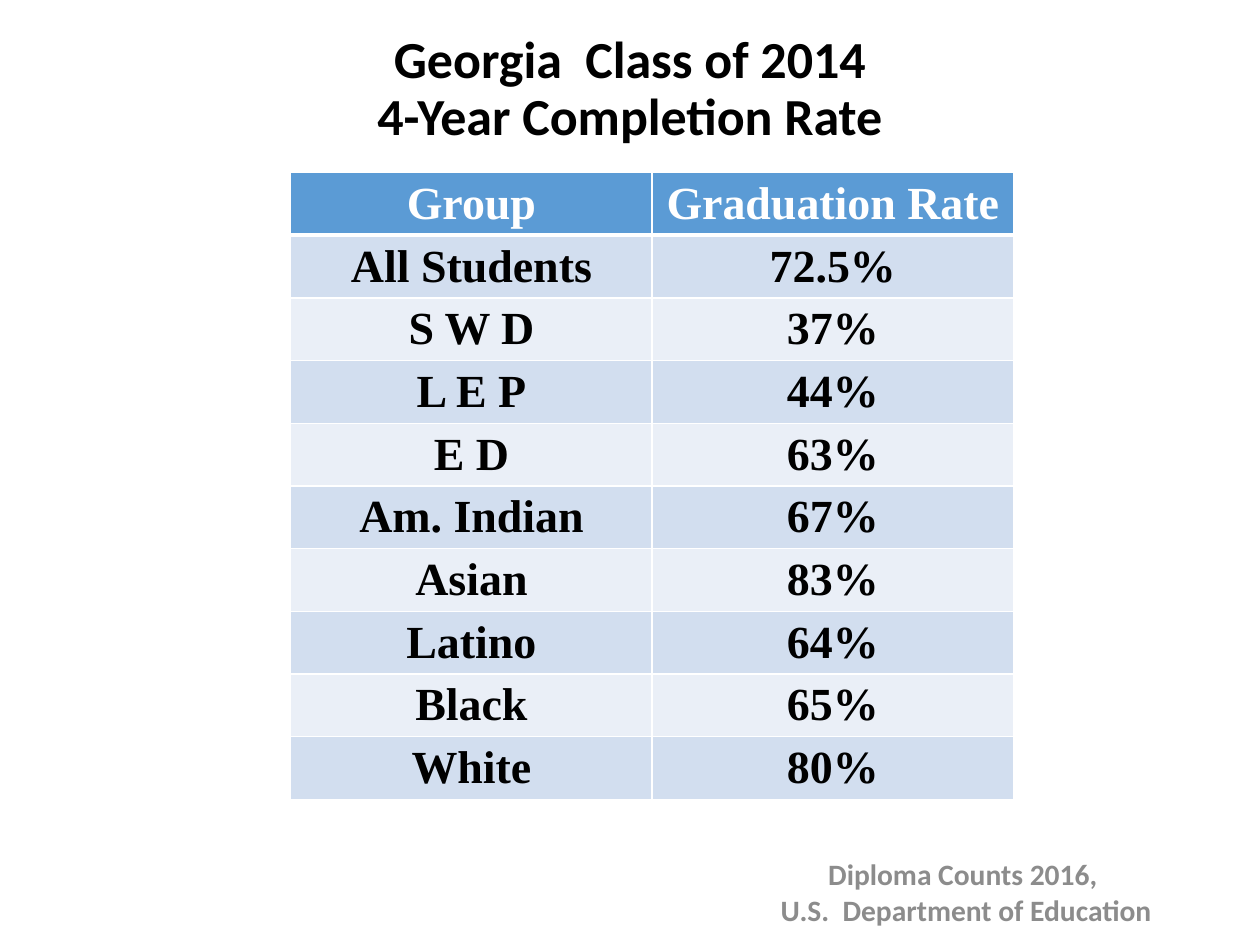
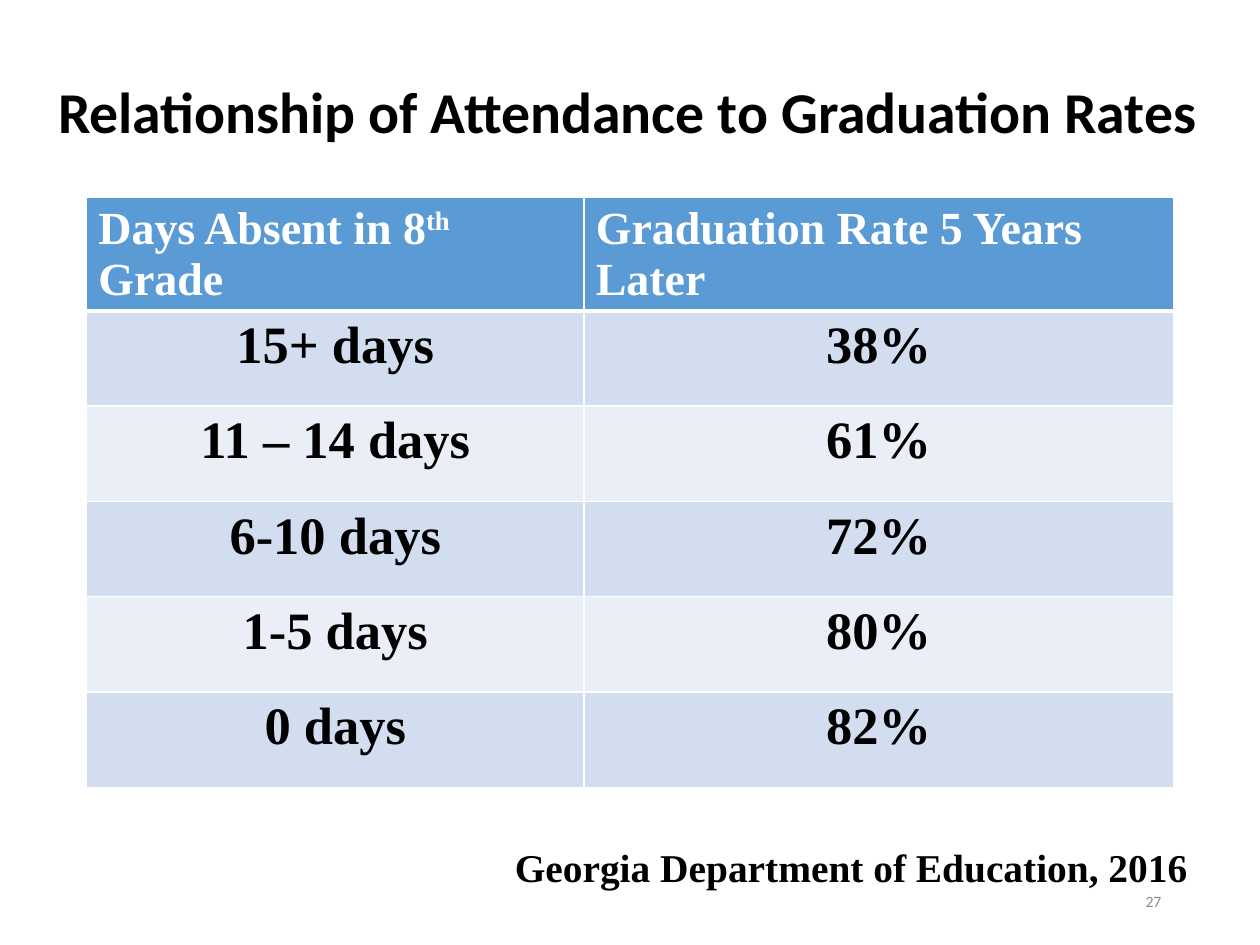
"""Build two slides of tables on graduation rates in Georgia."""
from lxml.etree import SubElement
from pptx import Presentation
from pptx.dml.color import RGBColor
from pptx.enum.text import MSO_ANCHOR, MSO_AUTO_SIZE, PP_ALIGN
from pptx.oxml.ns import qn
from pptx.util import Pt

COLOURS = {
    "header": "5B9BD5",
    "band_dark": "D2DEEF",
    "band_light": "EAEFF7",
    "white": "FFFFFF",
    "black": "000000",
    "grey": "8C8C8C",
}
SANS, SERIF = "Calibri", "Times New Roman"
SLIDE_SIZE = (768, 576)

SLIDES = [
    {
        "title": ["Georgia  Class of 2014", "4-Year Completion Rate"],
        "title_at": (52.8, 15, 662.4, 80),
        "title_size": 31.7,
        "table_at": (177.2, 105.2),
        "columns": (220.3, 220.3),
        "row_height": 37.5,
        "header": [["Group"], ["Graduation Rate"]],
        "header_align": PP_ALIGN.CENTER,
        "rows": [
            ("All Students", "72.5%"),
            ("S W D", "37%"),
            ("L E P", "44%"),
            ("E D", "63%"),
            ("Am. Indian", "67%"),
            ("Asian", "83%"),
            ("Latino", "64%"),
            ("Black", "65%"),
            ("White", "80%"),
        ],
        "body_size": 28,
        "notes": [
            {
                "lines": ["Diploma Counts 2016, ", "U.S.  Department of Education"],
                "at": (460, 522.7, 257.8, 41.8),
                "style": (SANS, 18, "grey", True),
                "align": PP_ALIGN.CENTER,
                "anchor": MSO_ANCHOR.MIDDLE,
            },
        ],
    },
    {
        "title": ["Relationship of Attendance to Graduation Rates"],
        "title_at": (21.6, 31, 721.4, 77.8),
        "title_size": 35.2,
        "table_at": (52.8, 120.3),
        "columns": (303.2, 359.2),
        "row_height": 58.1,
        "header": [["Days Absent in 8", "th", " Grade"], ["Graduation Rate 5 Years Later"]],
        "header_align": PP_ALIGN.LEFT,
        "rows": [
            ("15+ days", "38%"),
            ("11 – 14 days", "61%"),
            ("6-10 days", "72%"),
            ("1-5 days", "80%"),
            ("0 days", "82%"),
        ],
        "body_size": 32,
        "notes": [
            {
                "lines": ["27"],
                "at": (542.2, 533.5, 172.8, 31),
                "style": (SANS, 9.6, "grey", False),
                "align": PP_ALIGN.RIGHT,
                "anchor": MSO_ANCHOR.MIDDLE,
            },
            {
                "lines": ["Georgia Department of Education, 2016"],
                "at": (306.7, 510.5, 428.4, 36),
                "style": (SERIF, 24, "black", True),
                "align": PP_ALIGN.LEFT,
                "anchor": MSO_ANCHOR.TOP,
                "wrap": False,
            },
        ],
    },
]


def add_span(para, text, font, size, colour, bold):
    span = para.add_run()
    span.text = text
    span.font.name = font
    span.font.size = Pt(size)
    span.font.bold = bold
    span.font.color.rgb = RGBColor.from_string(COLOURS[colour])
    return span


def place(box, at):
    box.left, box.top, box.width, box.height = map(Pt, at)


def add_title(page, content):
    title = page.shapes.title
    place(title, content["title_at"])
    frame = title.text_frame
    frame.auto_size = MSO_AUTO_SIZE.NONE
    frame.vertical_anchor = MSO_ANCHOR.MIDDLE
    para = frame.paragraphs[0]
    para.alignment = PP_ALIGN.CENTER
    para.line_spacing = 0.9
    for number, line in enumerate(content["title"]):
        if number:
            para.add_line_break()
        add_span(para, line, SANS, content["title_size"], "black", True)


def style_cell(cell, colour, bottom_width):
    properties = cell._tc.get_or_add_tcPr()
    for side, width in (("L", 1), ("R", 1), ("T", 1), ("B", bottom_width)):
        line = SubElement(properties, qn(f"a:ln{side}"), w=str(Pt(width)))
        fill = SubElement(line, qn("a:solidFill"))
        SubElement(fill, qn("a:srgbClr"), val=COLOURS["white"])
    cell.fill.solid()
    cell.fill.fore_color.rgb = RGBColor.from_string(COLOURS[colour])


def add_rates(page, content):
    widths = content["columns"]
    row_count = len(content["rows"]) + 1
    size = (sum(widths), content["row_height"] * row_count)
    table = page.shapes.add_table(
        row_count, len(widths), *map(Pt, content["table_at"] + size)
    ).table
    for column, width in zip(table.columns, widths):
        column.width = Pt(width)
    for cell, parts in zip(table.rows[0].cells, content["header"]):
        style_cell(cell, "header", 3)
        para = cell.text_frame.paragraphs[0]
        para.alignment = content["header_align"]
        for part in parts:
            span = add_span(para, part, SERIF, 28, "white", True)
            if part == "th":
                span.font._element.set("baseline", "30000")
    for number, values in enumerate(content["rows"], 1):
        band = "band_dark" if number % 2 else "band_light"
        for cell, value in zip(table.rows[number].cells, values):
            style_cell(cell, band, 1)
            if number == 1:
                cell._tc.tcPr.find(qn("a:lnT")).set("w", str(Pt(3)))
            para = cell.text_frame.paragraphs[0]
            para.alignment = PP_ALIGN.CENTER
            add_span(para, value, SERIF, content["body_size"], "black", True)


def add_note(page, note):
    box = page.shapes.add_textbox(*map(Pt, note["at"]))
    frame = box.text_frame
    frame.word_wrap = note.get("wrap", True)
    frame.vertical_anchor = note["anchor"]
    for number, line in enumerate(note["lines"]):
        para = frame.add_paragraph() if number else frame.paragraphs[0]
        para.alignment = note["align"]
        add_span(para, line, *note["style"])


def main():
    deck = Presentation()
    deck.slide_width, deck.slide_height = map(Pt, SLIDE_SIZE)
    for content in SLIDES:
        page = deck.slides.add_slide(deck.slide_layouts[5])
        add_title(page, content)
        add_rates(page, content)
        for note in content["notes"]:
            add_note(page, note)
    deck.save("out.pptx")


if __name__ == "__main__":
    main()
